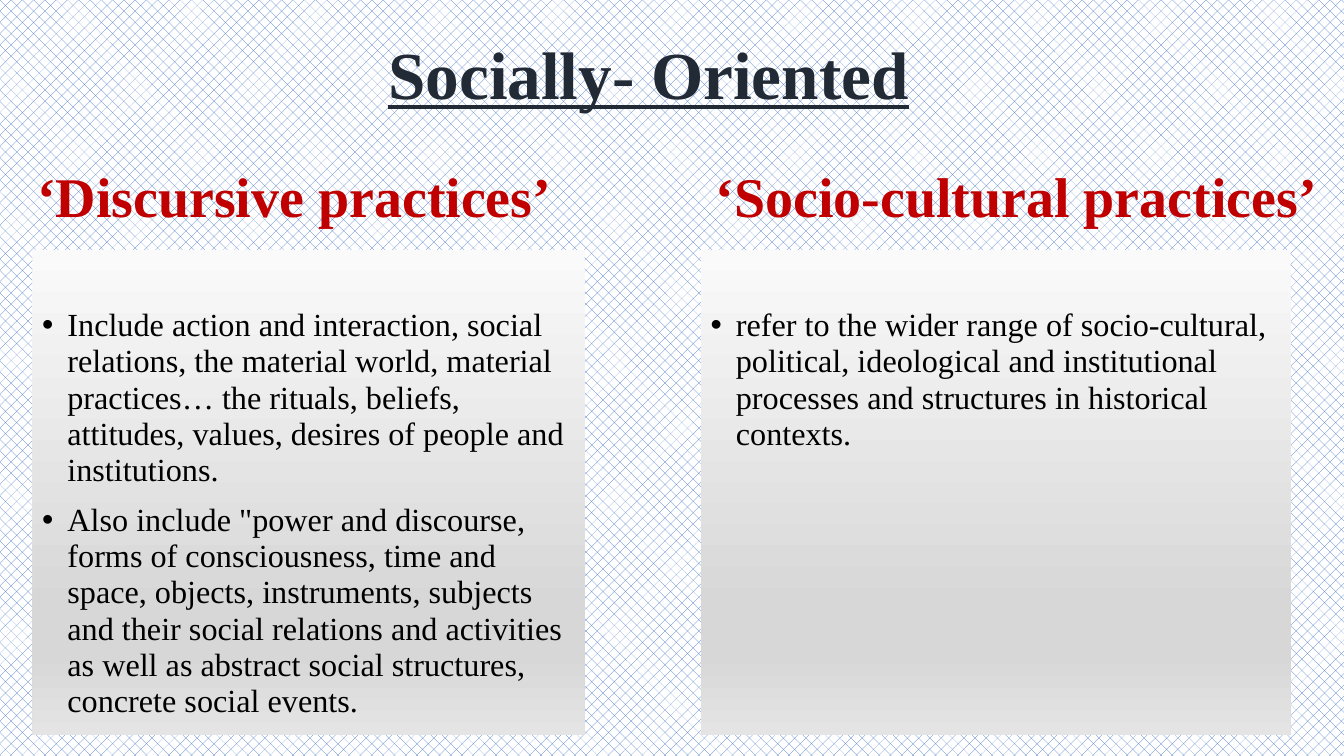
from dataclasses import dataclass

from lxml import etree
from pptx import Presentation
from pptx.dml.color import RGBColor
from pptx.enum import dml, shapes, text
from pptx.oxml import ns
from pptx.util import Inches, Pt

WIDTH, HEIGHT = 13.33, 7.5


@dataclass(frozen=True)
class Theme:
    font: str = "Times New Roman"
    title: str = "222A35"
    heading: str = "C00000"
    body: str = "000000"
    hatch: str = "4472C4"
    paper: str = "FFFFFF"
    panel: tuple = ((0, "FAFAFA"), (74, "D7D7D7"), (83, "D7D7D7"), (100, "E4E4E4"))
    title_size: int = 48
    heading_size: int = 40
    body_size: int = 23


THEME = Theme()
PANEL_TOP, PANEL_HEIGHT = 2.48 / HEIGHT, 4.81 / HEIGHT
HEADING_TOP, HEADING_HEIGHT = 1.48 / HEIGHT, 1 / HEIGHT
COLUMNS = [
    {
        "heading": "‘Discursive practices’",
        "heading_span": (0.12 / WIDTH, 5.6 / WIDTH),
        "panel_span": (0.32 / WIDTH, 5.48 / WIDTH),
        "points": [
            "Include action and interaction, social relations, the material world, "
            "material practices… the rituals, beliefs, attitudes, values, desires of "
            "people and institutions.",
            'Also include "power and discourse, forms of consciousness, time and space, '
            "objects, instruments, subjects and their social relations and activities "
            "as well as abstract social structures, concrete social events.",
        ],
    },
    {
        "heading": "‘Socio-cultural practices’",
        "heading_span": (6.98 / WIDTH, 6.2 / WIDTH),
        "panel_span": (6.95 / WIDTH, 5.85 / WIDTH),
        "points": [
            "refer to the wider range of socio-cultural, political, ideological and "
            "institutional processes and structures in historical contexts.",
        ],
    },
]


def place(left, top, width, height):
    return (Inches(left * WIDTH), Inches(top * HEIGHT),
            Inches(width * WIDTH), Inches(height * HEIGHT))


def add_span(para, words, size, color, bold=False, underline=False):
    span = para.add_run()
    span.text = words
    font = span.font
    font.name = THEME.font
    font.size = Pt(size)
    font.bold = bold
    font.underline = underline
    font.color.rgb = RGBColor.from_string(color)


def add_heading(page, area, words, size, color, underline=False):
    box = page.shapes.add_textbox(*place(*area))
    frame = box.text_frame
    frame.word_wrap = True
    frame.vertical_anchor = text.MSO_ANCHOR.MIDDLE
    frame.margin_left = frame.margin_right = 0
    para = frame.paragraphs[0]
    para.alignment = text.PP_ALIGN.CENTER
    para.line_spacing = 0.9
    add_span(para, words, size, color, bold=True, underline=underline)


def fill_gradient(shape, stops):
    shape.fill.gradient()
    gradient = shape.fill._xPr.find(ns.qn("a:gradFill"))
    stop_list = gradient.find(ns.qn("a:gsLst"))
    for stop in list(stop_list):
        stop_list.remove(stop)
    for percent, color in stops:
        stop = etree.SubElement(stop_list, ns.qn("a:gs"), pos=str(percent * 1000))
        etree.SubElement(stop, ns.qn("a:srgbClr"), val=color)
    gradient.find(ns.qn("a:lin")).set("ang", "5400000")


def add_bullet(para):
    properties = para._p.get_or_add_pPr()
    properties.set("marL", str(Inches(0.25)))
    properties.set("indent", str(Inches(-0.25)))
    etree.SubElement(properties, ns.qn("a:buFont"), typeface="Arial")
    etree.SubElement(properties, ns.qn("a:buChar"), char="•")


def add_panel(page, area, points):
    panel = page.shapes.add_shape(shapes.MSO_SHAPE.RECTANGLE, *place(*area))
    panel.shadow.inherit = False
    panel.line.fill.background()
    fill_gradient(panel, THEME.panel)
    frame = panel.text_frame
    frame.word_wrap = True
    frame.vertical_anchor = text.MSO_ANCHOR.TOP
    frame.margin_top = Inches(0.57)
    for index, point in enumerate(points):
        para = frame.add_paragraph() if index else frame.paragraphs[0]
        add_bullet(para)
        para.alignment = text.PP_ALIGN.LEFT
        para.line_spacing = 0.94
        para.space_before = Pt(9.5 if index else 0)
        add_span(para, point, THEME.body_size, THEME.body)


def paint_background(page):
    fill = page.background.fill
    fill.patterned()
    fill.pattern = dml.MSO_PATTERN.PERCENT_25
    fill.fore_color.rgb = RGBColor.from_string(THEME.hatch)
    fill.back_color.rgb = RGBColor.from_string(THEME.paper)


def main():
    deck = Presentation()
    deck.slide_width, deck.slide_height = Inches(WIDTH), Inches(HEIGHT)
    page = deck.slides.add_slide(deck.slide_layouts[6])
    paint_background(page)
    add_heading(page, (0, 0, 12.87 / WIDTH, 1.55 / HEIGHT), "Socially- Oriented",
                THEME.title_size, THEME.title, underline=True)
    for column in COLUMNS:
        left, width = column["heading_span"]
        add_heading(page, (left, HEADING_TOP, width, HEADING_HEIGHT),
                    column["heading"], THEME.heading_size, THEME.heading)
        left, width = column["panel_span"]
        add_panel(page, (left, PANEL_TOP, width, PANEL_HEIGHT), column["points"])
    deck.save("out.pptx")


if __name__ == "__main__":
    main()
